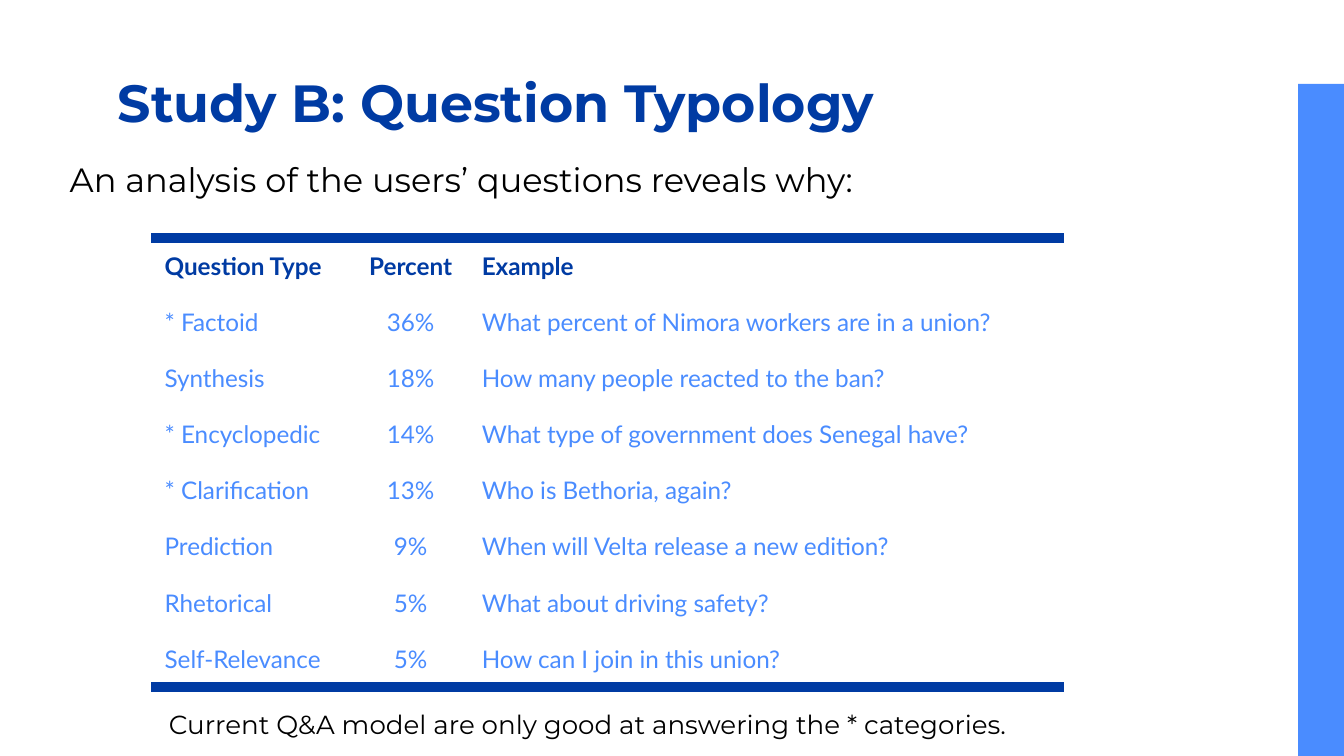
from dataclasses import dataclass

from lxml.etree import SubElement
from pptx import Presentation
from pptx.dml.color import RGBColor
from pptx.enum.shapes import MSO_SHAPE as Shape
from pptx.enum.text import PP_ALIGN as Align
from pptx.oxml.ns import qn
from pptx.util import Inches, Pt

SLIDE_WIDTH = Inches(10)
SLIDE_HEIGHT = SLIDE_WIDTH * 9 // 16
MARGINS = dict.fromkeys(
    ("margin_left", "margin_top", "margin_right", "margin_bottom"), Inches(0.1))
PLAIN_TABLE_STYLE = "{2D5ABB26-0587-4C30-8999-92F81FD0307C}"


@dataclass(frozen=True)
class Theme:
    navy: str = "003BA3"
    blue: str = "4A8CFF"
    black: str = "000000"
    heading_font: str = "Montserrat"
    table_font: str = "Lato"
    title_size: int = 28
    lead_size: int = 18
    note_size: int = 14
    table_size: int = 13
    rule_width: int = 6


THEME = Theme()

QUESTION_TYPES = [
    ("Question Type", "Percent", "Example"),
    ("* Factoid", "36%", "What percent of Nimora workers are in a union?"),
    ("Synthesis", "18%", "How many people reacted to the ban?"),
    ("* Encyclopedic", "14%", "What type of government does Senegal have?"),
    ("* Clarification", "13%", "Who is Bethoria, again?"),
    ("Prediction", "9%", "When will Velta release a new edition?"),
    ("Rhetorical", "5%", "What about driving safety?"),
    ("Self-Relevance", "5%", "How can I join in this union?"),
]
COLUMN_SHARES = (15, 8.6, 44.3)
ROW_SHARE = 7.4


def across(percent):
    return round(SLIDE_WIDTH * percent / 100)


def down(percent):
    return round(SLIDE_HEIGHT * percent / 100)


def area(left, top, width, height):
    """Turn percentages of the slide into a position and size."""
    return across(left), down(top), across(width), down(height)


def set_format(target, values):
    for name, value in values.items():
        setattr(target, name, value)


def write(frame, text, font, size, color, bold=False, align=Align.LEFT):
    paragraph = frame.paragraphs[0]
    paragraph.alignment = align
    run = paragraph.add_run()
    run.text = text
    set_format(run.font, {"name": font, "size": Pt(size), "bold": bold})
    run.font.color.rgb = RGBColor.from_string(color)


def add_text(slide, box, text, size, color=THEME.black, **options):
    frame = slide.shapes.add_textbox(*box).text_frame
    set_format(frame, {"word_wrap": True, **MARGINS})
    write(frame, text, THEME.heading_font, size, color, **options)


def add_side_bar(slide):
    bar = slide.shapes.add_shape(Shape.RECTANGLE, *area(96.6, 11.1, 3.4, 88.9))
    bar.shadow.inherit = False
    bar.fill.solid()
    bar.fill.fore_color.rgb = RGBColor.from_string(THEME.blue)
    bar.line.fill.background()


def add_rule(cell, side):
    """Draw a heavy border on one side of a cell: lnT or lnB."""
    border = SubElement(cell._tc.get_or_add_tcPr(), qn(f"a:{side}"), w=str(Pt(THEME.rule_width)))
    fill = SubElement(border, qn("a:solidFill"))
    SubElement(fill, qn("a:srgbClr"), val=THEME.navy)


def add_question_table(slide):
    last = len(QUESTION_TYPES) - 1
    box = area(11.25, 31.5, sum(COLUMN_SHARES), ROW_SHARE * len(QUESTION_TYPES))
    table = slide.shapes.add_table(len(QUESTION_TYPES), len(COLUMN_SHARES), *box).table
    set_format(table, {"first_row": False, "horz_banding": False})
    table._tbl.tblPr.find(qn("a:tableStyleId")).text = PLAIN_TABLE_STYLE
    for column, share in zip(table.columns, COLUMN_SHARES):
        column.width = across(share)
    for row_index, texts in enumerate(QUESTION_TYPES):
        table.rows[row_index].height = down(ROW_SHARE)
        header = row_index == 0
        for column_index, text in enumerate(texts):
            cell = table.cell(row_index, column_index)
            set_format(cell, MARGINS)
            write(cell.text_frame, text, THEME.table_font, THEME.table_size,
                  THEME.navy if header else THEME.blue, bold=header,
                  align=Align.CENTER if column_index == 1 else Align.LEFT)
            if header:
                add_rule(cell, "lnT")
            elif row_index == last:
                add_rule(cell, "lnB")
            cell.fill.background()


def main():
    presentation = Presentation()
    set_format(presentation, {"slide_width": SLIDE_WIDTH, "slide_height": SLIDE_HEIGHT})
    slide = presentation.slides.add_slide(presentation.slide_layouts[6])
    add_side_bar(slide)
    add_text(slide, area(7.8, 7.5, 84.3, 12.6), "Study B: Question Typology",
             THEME.title_size, THEME.navy, bold=True)
    add_text(slide, area(4.2, 19.3, 75.9, 8.9),
             "An analysis of the users’ questions reveals why:", THEME.lead_size)
    add_question_table(slide)
    add_text(slide, area(5.8, 91.9, 75.9, 7.8),
             "Current Q&A model are only good at answering the * categories.",
             THEME.note_size, align=Align.CENTER)
    presentation.save("out.pptx")


if __name__ == "__main__":
    main()
